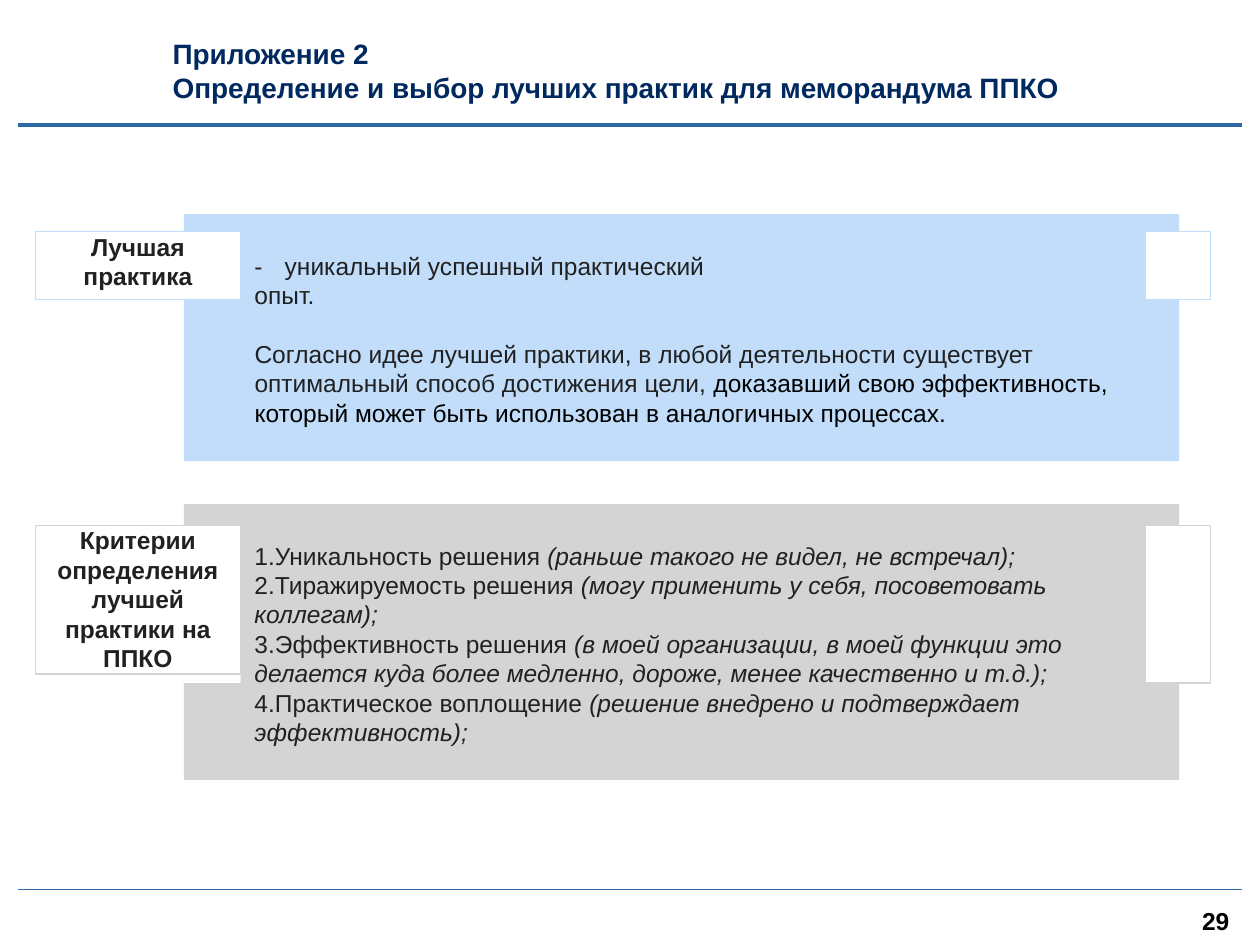
import pptx
import pptx.util
import pptx.dml.color
import pptx.enum.shapes
import pptx.enum.text
import pptx.oxml.ns
from lxml import etree

Inches = pptx.util.Inches
Pt = pptx.util.Pt
RGBColor = pptx.dml.color.RGBColor
Align = pptx.enum.text.PP_ALIGN

NAVY = RGBColor(0x00, 0x29, 0x5F)
RULE_BLUE = RGBColor(0x2D, 0x6A, 0xA4)
PALE_BLUE = RGBColor(0xC1, 0xDD, 0xFA)
PALE_GREY = RGBColor(0xD4, 0xD4, 0xD4)
INK = RGBColor(0x21, 0x21, 0x21)
BLACK = RGBColor(0x00, 0x00, 0x00)
WHITE = RGBColor(0xFF, 0xFF, 0xFF)

TITLE = "Приложение 2\nОпределение и выбор лучших практик для меморандума ППКО"
DEFINITION = "-\tуникальный успешный практический опыт."
IDEA = [
    ("Согласно идее лучшей практики, в любой деятельности существует "
     "оптимальный способ достижения цели, ", INK),
    ("доказавший свою эффективность, который может быть использован "
     "в аналогичных процессах.", BLACK),
]
CRITERIA = [
    ("Уникальность решения ", "(раньше такого не видел, не встречал);"),
    ("Тиражируемость решения ", "(могу применить у себя, посоветовать коллегам);"),
    ("Эффективность решения ", "(в моей организации, в моей функции это делается "
     "куда более медленно, дороже, менее качественно и т.д.);"),
    ("Практическое воплощение ", "(решение внедрено и подтверждает эффективность);"),
]


def set_font(font, color=INK, size=14, bold=False, italic=False):
    """Apply the slide's typeface to a font."""
    font.name = "Arial"
    font.size = Pt(size)
    font.bold = bold
    font.italic = italic
    font.color.rgb = color


def add_span(para, text, **style):
    """Append a styled run to a paragraph."""
    span = para.add_run()
    span.text = text
    set_font(span.font, **style)


def prepare_frame(frame, side=0):
    """Wrap text from the top of its box, with margins only at the sides."""
    frame.word_wrap = True
    frame.auto_size = pptx.enum.text.MSO_AUTO_SIZE.NONE
    frame.vertical_anchor = pptx.enum.text.MSO_ANCHOR.TOP
    frame.margin_left = frame.margin_right = Inches(side)
    frame.margin_top = frame.margin_bottom = 0


def place(shape, left, top, width, height):
    """Move and size a shape, in inches."""
    shape.left, shape.top = Inches(left), Inches(top)
    shape.width, shape.height = Inches(width), Inches(height)


def add_text_box(page, left, top, width, height):
    """Add an empty wrapped text box and return its frame."""
    box = page.shapes.add_textbox(
        Inches(left), Inches(top), Inches(width), Inches(height))
    prepare_frame(box.text_frame)
    return box.text_frame


def add_block(page, left, top, width, height, fill, line=None):
    """Add a flat rectangle."""
    block = page.shapes.add_shape(
        pptx.enum.shapes.MSO_SHAPE.RECTANGLE,
        Inches(left), Inches(top), Inches(width), Inches(height))
    block.shadow.inherit = False
    block.fill.solid()
    block.fill.fore_color.rgb = fill
    if line is None:
        block.line.fill.background()
    else:
        block.line.color.rgb = line
        block.line.width = Pt(0.75)
    return block


def add_rule(page, top, weight):
    """Add a horizontal rule across the page."""
    rule = page.shapes.add_connector(
        pptx.enum.shapes.MSO_CONNECTOR.STRAIGHT,
        Inches(0.14), Inches(top), Inches(9.86), Inches(top))
    rule.line.color.rgb = RULE_BLUE
    rule.line.width = Pt(weight)
    properties = rule.element.find(pptx.oxml.ns.qn("p:spPr"))
    etree.SubElement(properties, pptx.oxml.ns.qn("a:effectLst"))


def add_title(page, left, top, width, height):
    """Fill and place the title placeholder."""
    title = page.shapes.title
    place(title, left, top, width, height)
    title.text_frame.text = TITLE
    prepare_frame(title.text_frame)
    for para in title.text_frame.paragraphs:
        para.alignment = Align.LEFT
        for span in para.runs:
            set_font(span.font, color=NAVY, size=16, bold=True)


def add_panel(page, top, height, color, tab_top, tab_height, label, label_height, side=0):
    """Add a coloured panel with a label on its left and a tab on its right."""
    add_block(page, 1.46, top, 7.9, height, color)
    add_block(page, 0.28, tab_top, 1.63, tab_height, WHITE)
    box = add_block(page, 0.28, tab_top, 1.63, label_height, WHITE, color)
    box.text_frame.text = label
    prepare_frame(box.text_frame, side)
    for para in box.text_frame.paragraphs:
        para.alignment = Align.CENTER
        for span in para.runs:
            set_font(span.font, bold=True)
    add_block(page, 9.09, tab_top, 0.52, tab_height, WHITE, color)


def add_definition(page, left, top):
    """Add the definition and the idea behind it."""
    para = add_text_box(page, left, top, 4.1, 0.47).paragraphs[0]
    properties = para._p.get_or_add_pPr()
    tabs = etree.SubElement(properties, pptx.oxml.ns.qn("a:tabLst"))
    etree.SubElement(tabs, pptx.oxml.ns.qn("a:tab"), pos=str(Inches(0.24)), algn="l")
    add_span(para, DEFINITION)
    para = add_text_box(page, left, top + 0.7, 6.79, 0.94).paragraphs[0]
    for text, color in IDEA:
        add_span(para, text, color=color)


def add_criteria(page, left, top, width, height):
    """Fill the body placeholder with the numbered criteria, above the panels."""
    body = page.placeholders[1]
    body.element.getparent().append(body.element)
    place(body, left, top, width, height)
    frame = body.text_frame
    prepare_frame(frame)
    for index, (name, remark) in enumerate(CRITERIA):
        para = frame.paragraphs[0] if index == 0 else frame.add_paragraph()
        properties = para._p.get_or_add_pPr()
        properties.set("marL", str(Inches(0.01)))
        properties.set("indent", "0")
        etree.SubElement(
            properties, pptx.oxml.ns.qn("a:buAutoNum"), type="arabicPeriod")
        para.space_before = Pt(0)
        add_span(para, name)
        add_span(para, remark, italic=True)


def add_page_number(page, left, top, width, height):
    """Add the page number."""
    para = add_text_box(page, left, top, width, height).paragraphs[0]
    add_span(para, "29", color=BLACK, bold=True)


def main():
    """Build the slide and save it."""
    deck = pptx.Presentation()
    deck.slide_width, deck.slide_height = Inches(10), Inches(7.5)
    page = deck.slides.add_slide(deck.slide_layouts[1])
    add_title(page, 1.37, 0.29, 7.4, 0.54)
    add_rule(page, 0.99, 2.25)
    add_panel(page, 1.7, 1.96, PALE_BLUE, 1.84, 0.54, "Лучшая\nпрактика", 0.54)
    add_definition(page, 2.02, 1.99)
    add_panel(page, 4, 2.19, PALE_GREY, 4.17, 1.25,
              "Критерии определения лучшей практики на ППКО", 1.18, side=0.15)
    add_criteria(page, 2.01, 4.29, 6.68, 1.65)
    add_rule(page, 7.06, 0.75)
    add_page_number(page, 9.54, 7.19, 0.33, 0.24)
    deck.save("out.pptx")


if __name__ == "__main__":
    main()
